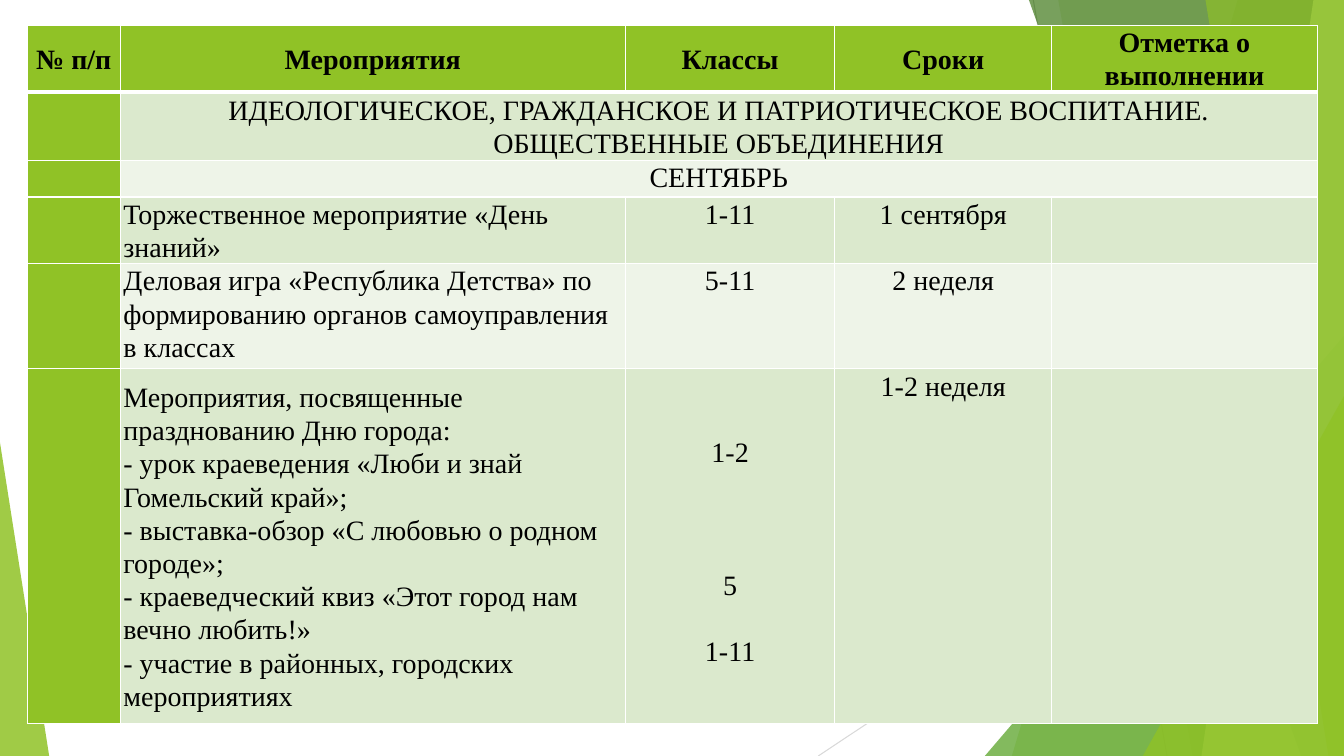
import pptx
import pptx.util
import pptx.dml.color
import pptx.enum.shapes
import pptx.enum.text
import pptx.oxml
import pptx.oxml.ns
import lxml.etree

Cm = pptx.util.Cm
Pt = pptx.util.Pt
COLORS = {
    "lime": "90C226", "green": "54A021", "dark": "3F7819", "pale": "C0E474",
    "band": "DBE9CD", "light": "EEF4E8", "white": "FFFFFF", "black": "000000",
    "grey": "BFBFBF", "silver": "D9D9D9",
}
WIDTH, HEIGHT = 33.87, 19.05
LINE_PITCH = 23.7


def rgb(name):
    return pptx.dml.color.RGBColor.from_string(COLORS[name])


def paint(shape, color, opacity):
    shape.shadow.inherit = False
    shape.line.fill.background()
    shape.fill.solid()
    shape.fill.fore_color.rgb = rgb(color)
    tone = shape.fill._xPr.find(".//" + pptx.oxml.ns.qn("a:srgbClr"))
    alpha = lxml.etree.SubElement(tone, pptx.oxml.ns.qn("a:alpha"))
    alpha.set("val", str(opacity * 1000))


deck = pptx.Presentation()
deck.slide_width, deck.slide_height = Cm(WIDTH), Cm(HEIGHT)
page = deck.slides.add_slide(deck.slide_layouts[6])
shapes = page.shapes

for x1, y1, x2, y2, color in [
    (26.04, 0, 29.41, HEIGHT, "grey"),
    (WIDTH, 10.24, 20.62, HEIGHT, "silver"),
]:
    ray = shapes.add_connector(
        pptx.enum.shapes.MSO_CONNECTOR.STRAIGHT, Cm(x1), Cm(y1), Cm(x2), Cm(y2))
    ray.line.color.rgb = rgb(color)
    ray.line.width = Pt(0.75)
    lxml.etree.SubElement(ray._element.spPr, pptx.oxml.ns.qn("a:effectLst"))

facets = [
    ("sheet", 31.19, 25.5, "lime", 30),
    ("sheet", 26.67, 30.05, "lime", 20),
    ("triangle", (24.82, 8.46, 9.05), 1, "green", 72),
    ("sheet", 25.93, 32.79, "dark", 70),
    ("sheet", 33.1, 30.28, "pale", 70),
    ("sheet", 30.38, 33.48, "lime", 65),
    ("triangle", (28.8, 9.98, 5.07), 1, "lime", 80),
    ("triangle", (0, 11.15, 1.24), 0, "lime", 85),
]
for kind, start, end, color, opacity in facets:
    if kind == "sheet":
        outline = shapes.build_freeform(Cm(start), 0)
        outline.add_line_segments(
            [(Cm(WIDTH), 0), (Cm(WIDTH), Cm(HEIGHT)), (Cm(end), Cm(HEIGHT))], close=True)
        facet = outline.convert_to_shape()
    else:
        left, top, width = start
        facet = shapes.add_shape(
            pptx.enum.shapes.MSO_SHAPE.ISOSCELES_TRIANGLE,
            Cm(left), Cm(top), Cm(width), Cm(HEIGHT - top))
        facet.adjustments[0] = end
    paint(facet, color, opacity)

city_day = [
    "Мероприятия, посвященные празднованию Дню города:",
    "- урок краеведения «Люби и знай Гомельский край»;",
    "- выставка-обзор «С любовью о родном городе»;",
    "- краеведческий квиз «Этот город нам вечно любить!»",
    "- участие в районных, городских мероприятиях",
]
plan = [
    ["№ п/п", "Мероприятия", "Классы", "Сроки", "Отметка о выполнении"],
    ["", "ИДЕОЛОГИЧЕСКОЕ, ГРАЖДАНСКОЕ И ПАТРИОТИЧЕСКОЕ ВОСПИТАНИЕ. "
         "ОБЩЕСТВЕННЫЕ ОБЪЕДИНЕНИЯ", "", "", ""],
    ["", "СЕНТЯБРЬ", "", "", ""],
    ["", "Торжественное мероприятие «День знаний»", "1-11", "1 сентября", ""],
    ["", "Деловая игра «Республика Детства» по формированию органов "
         "самоуправления в классах", "5-11", "2 неделя", ""],
    ["", "\n".join(city_day), "1-2\n5\n1-11", "1-2 неделя", ""],
]
column_widths = [2.34, 12.73, 5.28, 5.46, 6.7]
row_heights = [1.66, 1.73, 0.92, 1.68, 2.65, 8.94]
middle_cells = [(1, 1), (5, 1)]

table = shapes.add_table(
    len(plan), len(column_widths), Cm(0.69), Cm(0.64),
    Cm(sum(column_widths)), Cm(sum(row_heights))).table
table.first_row = table.horz_banding = False
for column, width in zip(table.columns, column_widths):
    column.width = Cm(width)
for row, height in zip(table.rows, row_heights):
    row.height = Cm(height)

for r, texts in enumerate(plan):
    for c, text in enumerate(texts):
        cell = table.cell(r, c)
        cell.text_frame.text = text
        cell.margin_left = cell.margin_right = Cm(0.08)
        cell.margin_top = cell.margin_bottom = 0
        if r == 0 or (r, c) in middle_cells:
            cell.vertical_anchor = pptx.enum.text.MSO_ANCHOR.MIDDLE
        for para in cell.text_frame.paragraphs:
            para.line_spacing = 1.07
            if c != 1 or r < 3:
                para.alignment = pptx.enum.text.PP_ALIGN.CENTER
            for span in para.runs:
                span.font.name = "Times New Roman"
                span.font.size = Pt(20)
                span.font.bold = r == 0
                span.font.color.rgb = rgb("black")
        properties = cell._tc.get_or_add_tcPr()
        for side in ["L", "R", "T", "B"]:
            under_header = (r, side) in [(0, "B"), (1, "T")]
            properties.append(pptx.oxml.parse_xml(
                f'<a:ln{side} {pptx.oxml.ns.nsdecls("a")} w="{Pt(3 if under_header else 1)}">'
                f'<a:solidFill><a:srgbClr val="{COLORS["white"]}"/></a:solidFill></a:ln{side}>'))
        cell.fill.solid()
        cell.fill.fore_color.rgb = rgb(
            "lime" if r == 0 or c == 0 else "band" if r % 2 else "light")

for r in [1, 2]:
    table.cell(r, 1).merge(table.cell(r, 4))

city_classes = table.cell(5, 2)
city_classes.margin_top = Pt(2 * LINE_PITCH)
for para, skipped_lines in zip(city_classes.text_frame.paragraphs, [0, 3, 1]):
    para.space_before = Pt(skipped_lines * LINE_PITCH)

deck.save("out.pptx")
